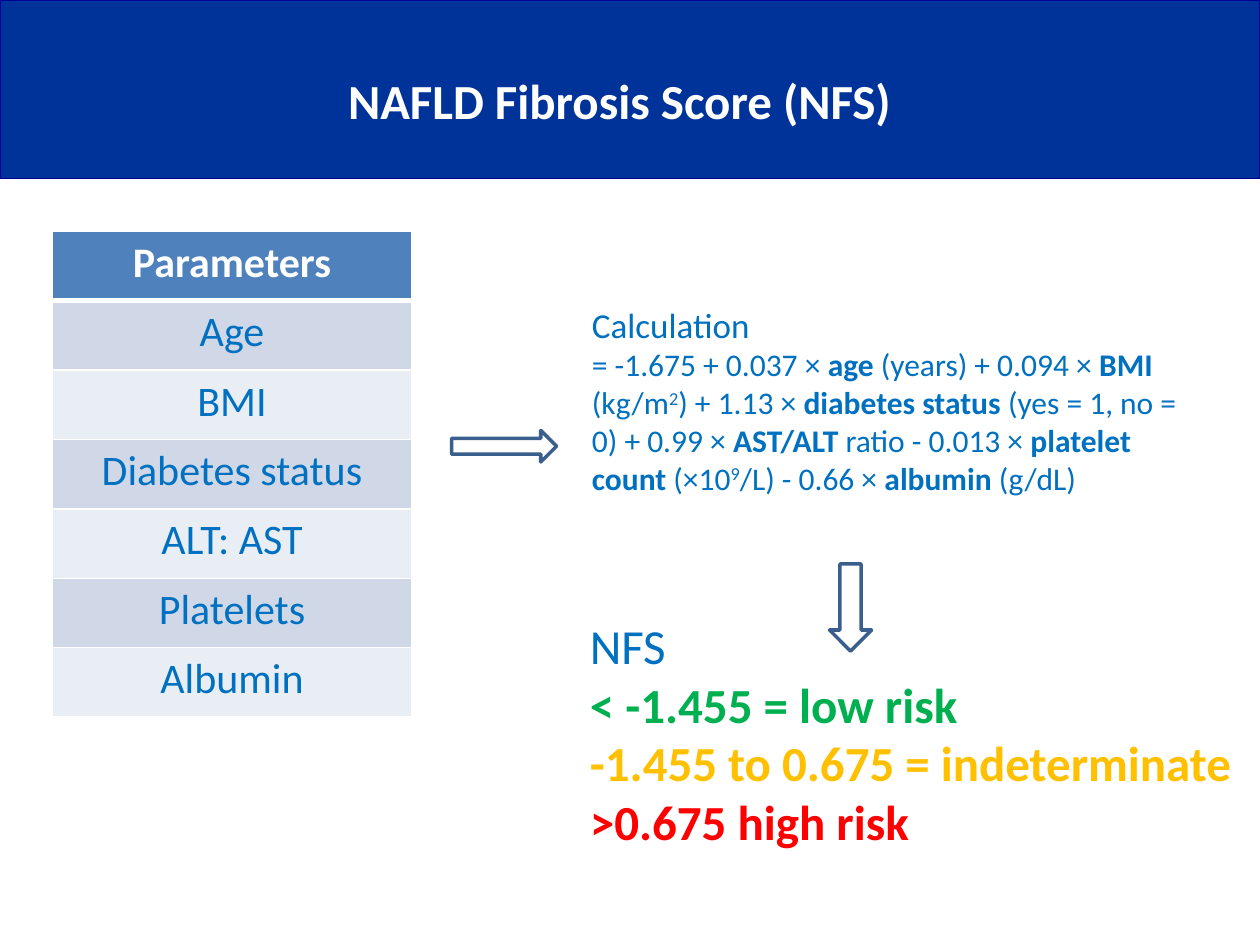
from lxml import etree
from pptx import Presentation
from pptx.dml.color import RGBColor
from pptx.enum.shapes import MSO_SHAPE
from pptx.enum.text import MSO_ANCHOR, PP_ALIGN
from pptx.oxml.ns import qn
from pptx.util import Inches, Pt

RECT = MSO_SHAPE.RECTANGLE
RIGHT = MSO_SHAPE.RIGHT_ARROW
DOWN = MSO_SHAPE.DOWN_ARROW
CENTER, LEFT = PP_ALIGN.CENTER, PP_ALIGN.LEFT
TOP, MIDDLE = MSO_ANCHOR.TOP, MSO_ANCHOR.MIDDLE

WHITE = RGBColor(0xFF, 0xFF, 0xFF)
NAVY = RGBColor(0x00, 0x33, 0x99)
EDGE = RGBColor(0x00, 0x00, 0x99)
BLUE = RGBColor(0x00, 0x70, 0xC0)
STEEL = RGBColor(0x3A, 0x5F, 0x8C)
HEAD = RGBColor(0x4F, 0x81, 0xBD)
BANDS = (RGBColor(0xE9, 0xED, 0xF4), RGBColor(0xD0, 0xD8, 0xE8))
GREEN = RGBColor(0x00, 0xB0, 0x50)
AMBER = RGBColor(0xFF, 0xC0, 0x00)
RED = RGBColor(0xFF, 0x00, 0x00)

# The grid has 12 columns and 9 rows on the slide
WIDTH, HEIGHT = Inches(10), Inches(7.5)
COL, ROW = WIDTH / 12, HEIGHT / 9

FORMULA = (
    "= -1.675 + 0.037 × *age* (years) + 0.094 × *BMI* (kg/m^2^) + 1.13 × "
    "*diabetes status *(yes = 1, no = 0) + 0.99 × *AST/ALT* ratio - 0.013 × "
    "*platelet count *(×10^9^/L) - 0.66 × *albumin* (g/dL)"
)


class Page:
    font = "Calibri"

    def __init__(self, deck):
        self.shapes = deck.slides.add_slide(deck.slide_layouts[6]).shapes

    def place(self, col, row, wide, high):
        return [round(v) for v in (col * COL, row * ROW, wide * COL, high * ROW)]

    def shape(self, kind, box, line, weight, fill=None):
        item = self.shapes.add_shape(kind, *self.place(*box))
        item.shadow.inherit = False
        if fill is None:
            item.fill.background()
        else:
            item.fill.solid()
            item.fill.fore_color.rgb = fill
        item.line.color.rgb = line
        item.line.width = Pt(weight)

    def label(self, para, text, size, color, bold=False, align=LEFT):
        """Stars switch bold on and off, carets switch superscript."""
        para.alignment = align
        for i, part in enumerate(text.split("*")):
            for j, bit in enumerate(part.split("^")):
                if not bit:
                    continue
                run = para.add_run()
                run.text = bit
                font = run.font
                font.name, font.size = self.font, Pt(size)
                font.bold = bold or i % 2 == 1
                font.color.rgb = color
                if j % 2:
                    run._r.get_or_add_rPr().set("baseline", "30000")

    def text(self, box, lines, align=LEFT, anchor=TOP):
        frame = self.shapes.add_textbox(*self.place(*box)).text_frame
        frame.word_wrap = True
        frame.vertical_anchor = anchor
        for i, line in enumerate(lines):
            para = frame.add_paragraph() if i else frame.paragraphs[0]
            self.label(para, *line, align=align)

    def border(self, cell, side, weight):
        props = cell._tc.get_or_add_tcPr()
        line = etree.SubElement(props, qn("a:ln" + side), w=str(int(Pt(weight))))
        fill = etree.SubElement(line, qn("a:solidFill"))
        etree.SubElement(fill, qn("a:srgbClr"), val=str(WHITE))

    def table(self, box, names, size):
        grid = self.shapes.add_table(len(names), 1, *self.place(*box)).table
        for i, name in enumerate(names):
            cell = grid.cell(i, 0)
            top = i == 0
            self.label(cell.text_frame.paragraphs[0], name, size,
                       WHITE if top else BLUE, top, CENTER)
            for side in "LRTB":
                thick = (side == "B" and i == 0) or (side == "T" and i == 1)
                self.border(cell, side, 3 if thick else 1)
            cell.fill.solid()
            cell.fill.fore_color.rgb = HEAD if top else BANDS[i % 2]


def main():
    deck = Presentation()
    deck.slide_width, deck.slide_height = WIDTH, HEIGHT
    page = Page(deck)

    # Title band
    page.shape(RECT, (0, 0, 12, 1.7), EDGE, 0.75, NAVY)
    page.text((0.2, 0.2, 11.4, 1.5),
              [("NAFLD Fibrosis Score (NFS)", 28, WHITE, True)], CENTER, MIDDLE)

    # Risk levels
    page.text((5.5, 5.8, 7.4, 2.95), [
        ("NFS", 28, BLUE),
        ("< -1.455 = low risk", 28, GREEN, True),
        ("-1.455 to 0.675 = indeterminate", 28, AMBER, True),
        (">0.675 high risk", 28, RED, True),
    ])

    # Parameters
    page.table((0.5, 2.2, 3.42, 4.63),
               ["Parameters", "Age", "BMI", "Diabetes status",
                "ALT: AST", "Platelets", "Albumin"], 24)

    # Formula
    page.text((5.52, 2.83, 6, 1.98),
              [("Calculation", 20, BLUE), (FORMULA, 18, BLUE)])

    # Flow arrows
    page.shape(RIGHT, (4.3, 4.1, 1, 0.3), STEEL, 2)
    page.shape(DOWN, (7.9, 5.37, 0.4, 0.83), STEEL, 2)

    deck.save("out.pptx")


if __name__ == "__main__":
    main()
